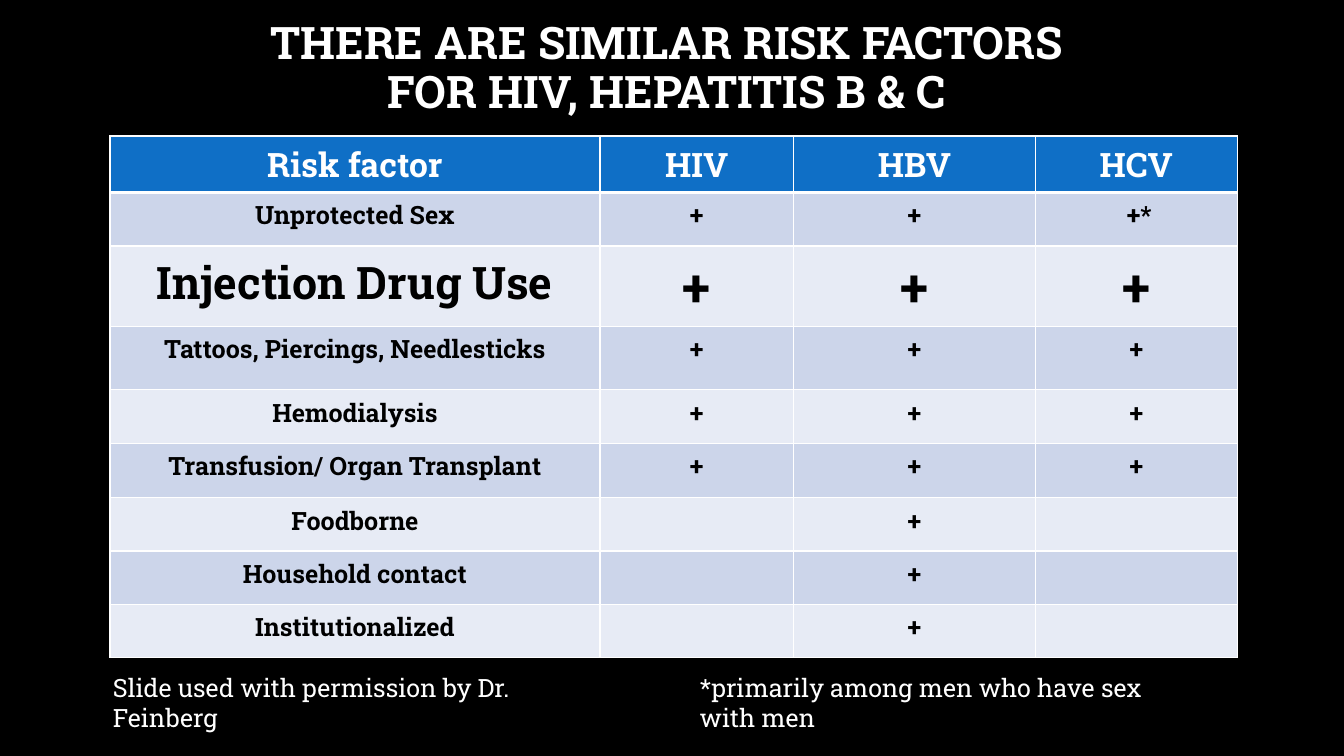
from dataclasses import dataclass

from lxml import etree
from pptx import Presentation
from pptx.dml.color import RGBColor
from pptx.enum.text import MSO_ANCHOR, MSO_AUTO_SIZE, PP_ALIGN
from pptx.oxml.ns import qn
from pptx.util import Inches, Pt

CENTER, LEFT = PP_ALIGN.CENTER, PP_ALIGN.LEFT
MIDDLE, TOP = MSO_ANCHOR.MIDDLE, MSO_ANCHOR.TOP
GROW, FIXED = MSO_AUTO_SIZE.SHAPE_TO_FIT_TEXT, MSO_AUTO_SIZE.NONE


@dataclass(frozen=True)
class Theme:
    font: str = "Roboto Slab"
    background: str = "000000"
    light: str = "FFFFFF"
    dark: str = "000000"
    header: str = "0F6FC6"
    bands: tuple = ("CCD5EA", "E7EBF5")
    title_size: int = 32
    header_size: int = 24
    body_size: int = 18
    strong_size: int = 32
    strong_mark_size: int = 37


COLUMNS = (4.86, 1.92, 2.4, 2)
HEADINGS = ("Risk factor", "HIV", "HBV", "HCV")
STRONG_FACTOR = "Injection Drug Use"
RISKS = (
    (0.53, "Unprotected Sex", "+", "+", " +*"),
    (0.66, STRONG_FACTOR, "+", "+", "+"),
    (0.63, "Tattoos, Piercings, Needlesticks", "+", "+", "+"),
    (0.53, "Hemodialysis", "+", "+", "+"),
    (0.54, "Transfusion/ Organ Transplant", "+", "+", "+"),
    (0.53, "Foodborne", "", "+", ""),
    (0.53, "Household contact", "", "+", ""),
    (0.53, "Institutionalized", "", "+", ""),
)
NOTES = (
    (1.02, "Slide used with permission by Dr. Feinberg"),
    (6.84, "*primarily among men who have sex with men"),
)


class SlideBuilder:
    def __init__(self, page, theme):
        self.page = page
        self.theme = theme
        fill = page.background.fill
        fill.solid()
        fill.fore_color.rgb = RGBColor.from_string(theme.background)

    def span(self, para, text, size, color, bold):
        span = para.add_run()
        span.text = text
        span.font.name = self.theme.font
        span.font.size = Pt(size)
        span.font.bold = bold
        span.font.color.rgb = RGBColor.from_string(color)

    def text(self, place, lines, size, bold=False, align=LEFT, anchor=TOP,
             spacing=1.0, auto_size=GROW):
        box = self.page.shapes.add_textbox(*map(Inches, place))
        frame = box.text_frame
        frame.word_wrap = True
        frame.auto_size = auto_size
        frame.vertical_anchor = anchor
        para = frame.paragraphs[0]
        para.alignment = align
        para.line_spacing = spacing
        for index, line in enumerate(lines):
            if index:
                para.add_line_break()
            self.span(para, line, size, self.theme.light, bold)

    def borders(self, cell, top, bottom):
        properties = cell._tc.get_or_add_tcPr()
        widths = (("a:lnL", 1), ("a:lnR", 1), ("a:lnT", top), ("a:lnB", bottom))
        for position, (tag, width) in enumerate(widths):
            line = etree.Element(qn(tag), w=str(Pt(width)))
            fill = etree.SubElement(line, qn("a:solidFill"))
            etree.SubElement(fill, qn("a:srgbClr"), val=self.theme.light)
            properties.insert(position, line)

    def cell(self, cell, text, size, color, fill, top=1, bottom=1):
        cell.margin_left = cell.margin_right = Inches(0.12)
        cell.margin_top = cell.margin_bottom = Inches(0.06)
        cell.fill.solid()
        cell.fill.fore_color.rgb = RGBColor.from_string(fill)
        self.borders(cell, top, bottom)
        para = cell.text_frame.paragraphs[0]
        para.alignment = CENTER
        if text:
            self.span(para, text, size, color, True)

    def risk_table(self, left, top, header_height):
        theme = self.theme
        heights = [header_height] + [risk[0] for risk in RISKS]
        table = self.page.shapes.add_table(
            len(heights), len(COLUMNS), Inches(left), Inches(top),
            Inches(sum(COLUMNS)), Inches(sum(heights))).table
        for column, width in zip(table.columns, COLUMNS):
            column.width = Inches(width)
        for row, height in zip(table.rows, heights):
            row.height = Inches(height)
        for column, heading in enumerate(HEADINGS):
            self.cell(table.cell(0, column), heading, theme.header_size,
                      theme.light, theme.header, bottom=3)
        for row, (_, *texts) in enumerate(RISKS, start=1):
            strong = texts[0] == STRONG_FACTOR
            for column, text in enumerate(texts):
                size = theme.body_size
                if strong:
                    size = theme.strong_mark_size if column else theme.strong_size
                self.cell(table.cell(row, column), text, size, theme.dark,
                          theme.bands[(row - 1) % 2], top=3 if row == 1 else 1)


def main():
    deck = Presentation()
    deck.slide_width, deck.slide_height = Inches(13.33), Inches(7.5)
    theme = Theme()
    builder = SlideBuilder(deck.slides.add_slide(deck.slide_layouts[6]), theme)
    builder.text((0.88, 0.22, 11.58, 0.94),
                 ("THERE ARE SIMILAR RISK FACTORS ", "FOR HIV, HEPATITIS B & C "),
                 theme.title_size, bold=True, align=CENTER, anchor=MIDDLE,
                 spacing=0.9, auto_size=FIXED)
    builder.risk_table(1.09, 1.35, 0.53)
    for left, note in NOTES:
        builder.text((left, 6.62, 5.12, 0.4), (note,), theme.body_size)
    deck.save("out.pptx")


if __name__ == "__main__":
    main()
